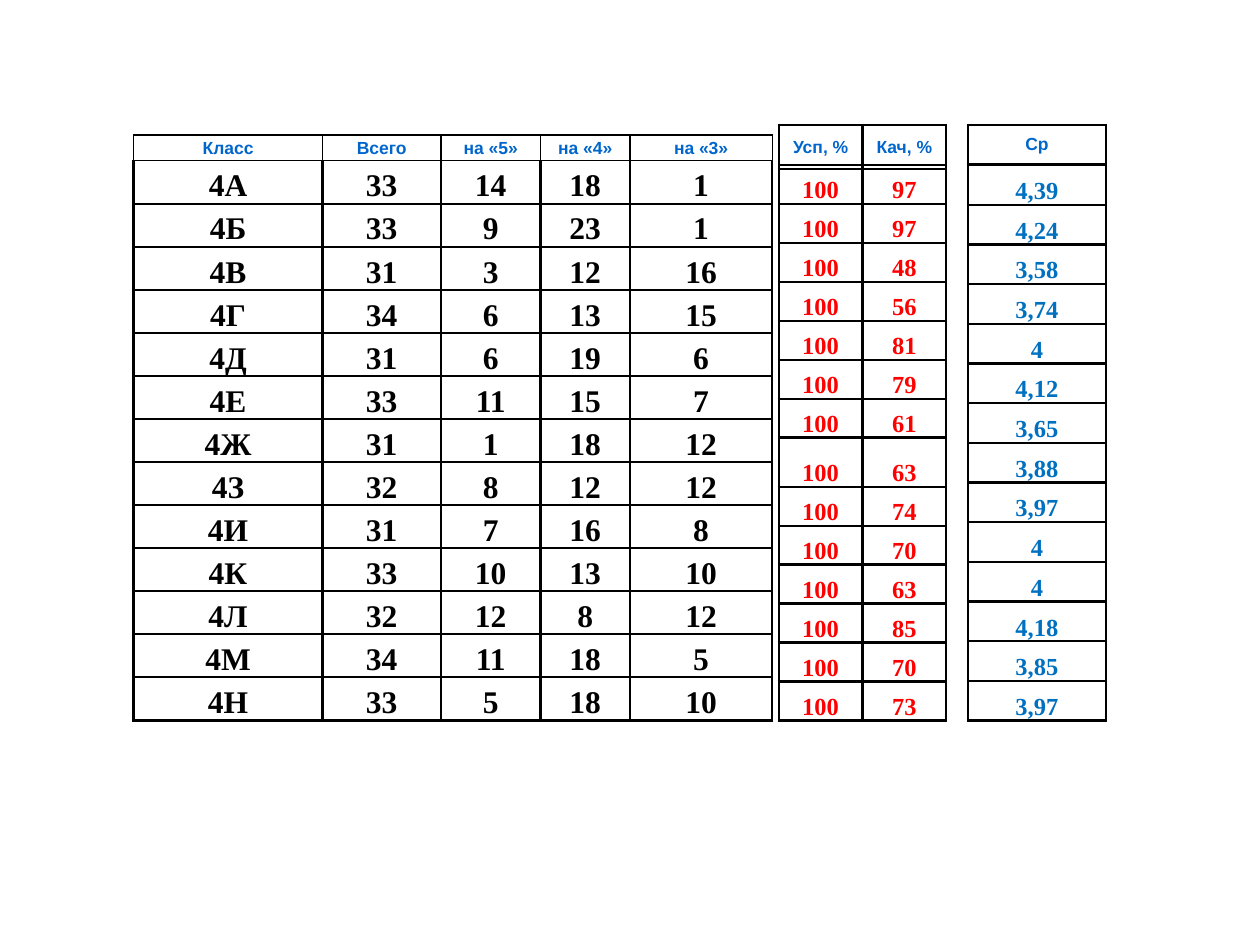
"""Build a slide of class results with grades, success rates and averages."""
from lxml.etree import SubElement
from pptx import Presentation
from pptx.dml.color import RGBColor
from pptx.enum.text import MSO_ANCHOR, PP_ALIGN
from pptx.oxml.ns import qn
from pptx.util import Inches, Pt

BLACK = RGBColor(0x00, 0x00, 0x00)
RED = RGBColor(0xFF, 0x00, 0x00)
BLUE = RGBColor(0x00, 0x70, 0xC0)
HEADER_BLUE = RGBColor(0x00, 0x66, 0xCC)

presentation = Presentation()
presentation.slide_width = Inches(10)
presentation.slide_height = Inches(7.5)
slide = presentation.slides.add_slide(presentation.slide_layouts[6])
COLUMN = presentation.slide_width / 1000
ROW = presentation.slide_height / 750

header_format = {"name": "Arial", "size": Pt(10), "bold": True}
grade_format = {"name": "Times New Roman", "size": Pt(18), "bold": True}
rate_format = {**grade_format, "size": Pt(14)}
header_style = (header_format, HEADER_BLUE, MSO_ANCHOR.MIDDLE)
thin, thick = Pt(1), Pt(1.5)


def add_borders(cell, top, other):
    """Draw the four black edges of a cell."""
    properties = cell._tc.get_or_add_tcPr()
    for side, width in (("L", other), ("R", other), ("T", top), ("B", other)):
        line = SubElement(properties, qn(f"a:ln{side}"), w=str(width))
        fill = SubElement(line, qn("a:solidFill"))
        SubElement(fill, qn("a:srgbClr"), val=str(BLACK))


def add_grid(left, top, widths, heights, records, styles, borders):
    """Add a table with one style and one border pair for each row."""
    table = slide.shapes.add_table(
        len(heights), len(widths), round(left * COLUMN), round(top * ROW),
        round(sum(widths) * COLUMN), round(sum(heights) * ROW)).table
    table.first_row = table.horz_banding = False
    for column, width in zip(table.columns, widths):
        column.width = round(width * COLUMN)
    for row, height, record, style, border in zip(
            table.rows, heights, records, styles, borders):
        row.height = round(height * ROW)
        font_format, color, anchor = style
        cell_format = {
            "margin_left": Inches(0.01), "margin_right": Inches(0.01),
            "margin_top": Inches(0.01), "margin_bottom": 0,
            "vertical_anchor": anchor}
        for cell, text in zip(row.cells, record):
            add_borders(cell, *border)
            cell.fill.background()
            for name, value in cell_format.items():
                setattr(cell, name, value)
            paragraph = cell.text_frame.paragraphs[0]
            paragraph.alignment = PP_ALIGN.CENTER
            run = paragraph.add_run()
            run.text = text
            for name, value in font_format.items():
                setattr(run.font, name, value)
            run.font.color.rgb = color


grades = [line.split() for line in (
    "4А 33 14 18 1", "4Б 33 9 23 1", "4В 31 3 12 16", "4Г 34 6 13 15",
    "4Д 31 6 19 6", "4Е 33 11 15 7", "4Ж 31 1 18 12", "4З 32 8 12 12",
    "4И 31 7 16 8", "4К 33 10 13 10", "4Л 32 12 8 12", "4М 34 11 18 5",
    "4Н 33 5 18 10")]
qualities = "97 97 48 56 81 79 61 63 74 70 63 85 70 73".split()
averages = "4,39 4,24 3,58 3,74 4 4,12 3,65 3,88 3,97 4 4 4,18 3,85 3,97".split()

grade_count, rate_count = len(grades), len(qualities)
grade_header = ["Класс", "Всего", "на «5»", "на «4»", "на «3»"]
grade_style = (grade_format, BLACK, MSO_ANCHOR.BOTTOM)
add_grid(
    106, 107, [150, 94, 79, 71, 113], [20.5] + [444.5 / grade_count] * grade_count,
    [grade_header] + grades, [header_style] + [grade_style] * grade_count,
    [(thin, thin), (thin, thick)] + [(thick, thick)] * (grade_count - 1))

rate_heights = [(441 - 39) / (rate_count - 1)] * rate_count
rate_heights[7] = 39
average_heights = [441 / rate_count] * rate_count
rates = [["100", quality] for quality in qualities]
for left, widths, header, header_height, heights, records, color in (
        (618, [66.5] * 2, ["Усп, %", "Кач, %"], 35, rate_heights, rates, RED),
        (768, [110], ["Ср"], 31, average_heights,
         [[average] for average in averages], BLUE)):
    add_grid(left, 131, widths, heights, records,
             [(rate_format, color, MSO_ANCHOR.BOTTOM)] * rate_count,
             [(thick, thick)] * rate_count)
    add_grid(left, 99, widths, [header_height], [header], [header_style],
             [(thick, thick)])

presentation.save("out.pptx")
